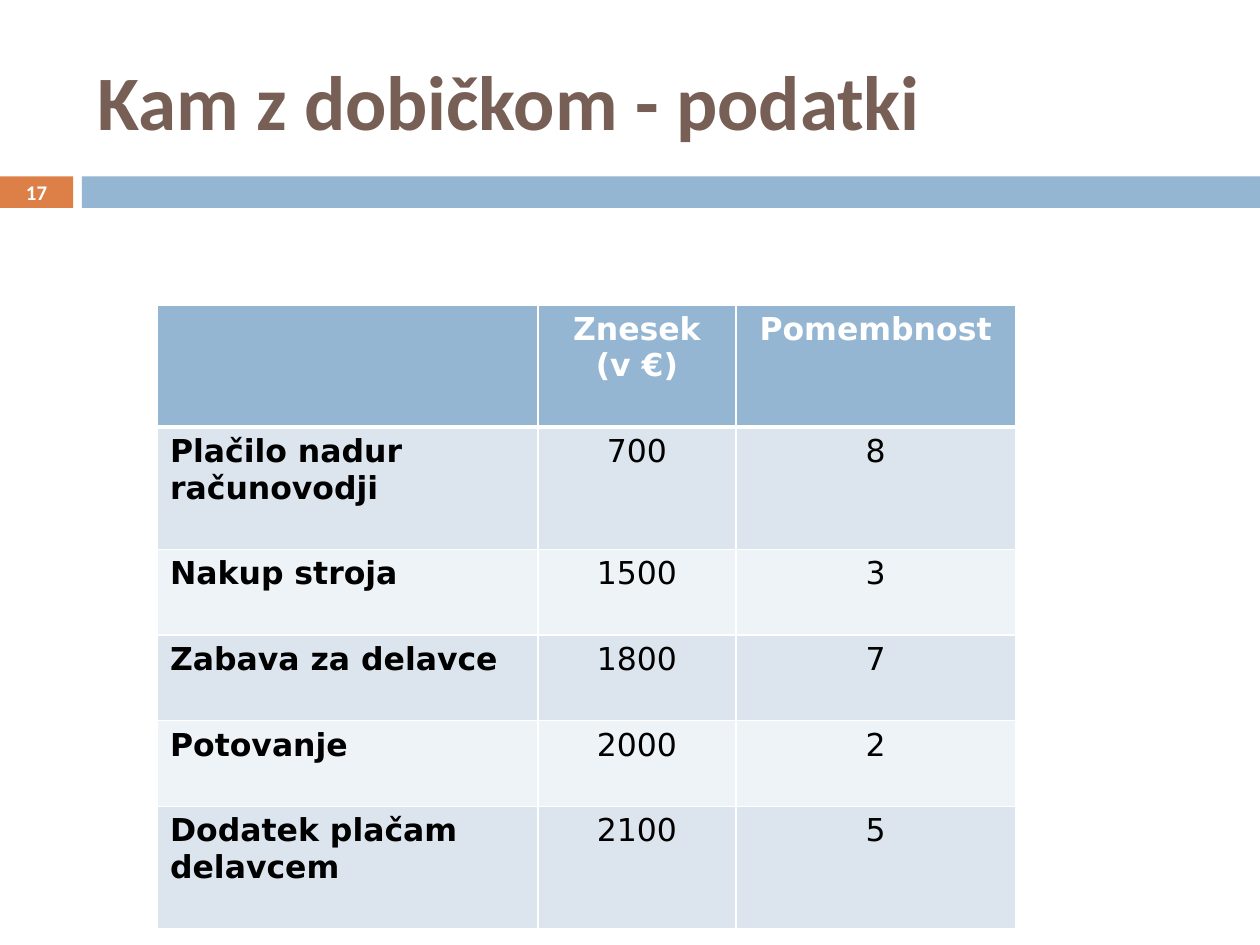
from lxml.etree import SubElement
from pptx import Presentation
from pptx.dml.color import RGBColor
from pptx.enum.shapes import MSO_SHAPE
from pptx.enum.text import MSO_ANCHOR, PP_ALIGN
from pptx.oxml.ns import qn
from pptx.util import Inches, Pt

BLUE, ORANGE, BROWN, WHITE = "94B6D2", "DD8047", "775F55", "FFFFFF"
BANDS = ["DCE5EE", "EEF3F7"]


def paint(fill, color):
    fill.solid()
    fill.fore_color.rgb = RGBColor.from_string(color)


def add_run(p, text, font, size, color, bold, align=PP_ALIGN.LEFT):
    p.alignment = align
    r = p.add_run()
    r.text = text
    r.font.name, r.font.size, r.font.bold = font, Pt(size), bold
    paint(r.font.fill, color)


prs = Presentation()
prs.slide_width, prs.slide_height = Inches(10), Inches(7.5)
s = prs.slides.add_slide(prs.slide_layouts[5])

# Title
title = s.shapes.title
title.left, title.top = Inches(0.67), Inches(0.25)
title.width, title.height = Inches(8.92), Inches(1.08)
tf = title.text_frame
tf.vertical_anchor = MSO_ANCHOR.MIDDLE
add_run(tf.paragraphs[0], "Kam z dobičkom - podatki", "Calibri", 44, BROWN, True)

# Divider: number block and bar
for left, width, color in [(0, 0.58, ORANGE), (0.65, 9.35, BLUE)]:
    sp = s.shapes.add_shape(MSO_SHAPE.RECTANGLE, Inches(left), Inches(1.4),
                            Inches(width), Inches(0.25))
    sp.shadow.inherit = False
    paint(sp.fill, color)
    sp.line.fill.background()

# Slide number
number = s.shapes.add_textbox(0, Inches(1.39), Inches(0.58), Inches(0.27))
tf = number.text_frame
tf.word_wrap = True
tf.vertical_anchor = MSO_ANCHOR.MIDDLE
tf.margin_left = tf.margin_right = tf.margin_top = tf.margin_bottom = 0
add_run(tf.paragraphs[0], "17", "Calibri", 11.9, WHITE, True, PP_ALIGN.CENTER)

# Table of spending options
rows = [
    ("", "Znesek (v €)", "Pomembnost"),
    ("Plačilo nadur računovodji", "700", "8"),
    ("Nakup stroja", "1500", "3"),
    ("Zabava za delavce", "1800", "7"),
    ("Potovanje", "2000", "2"),
    ("Dodatek plačam delavcem", "2100", "5"),
]
col_widths = [3.02, 1.57, 2.22]
row_heights = [0.97, 0.97, 0.68, 0.68, 0.68, 0.97]
table = s.shapes.add_table(len(rows), len(col_widths), Inches(1.25), Inches(2.42),
                           Inches(sum(col_widths)), Inches(sum(row_heights))).table
for column, width in zip(table.columns, col_widths):
    column.width = Inches(width)
for row, height in zip(table.rows, row_heights):
    row.height = Inches(height)

for i, values in enumerate(rows):
    for j, value in enumerate(values):
        cell = table.cell(i, j)
        header = i == 0
        # White grid, thicker below the header
        tc_pr = cell._tc.get_or_add_tcPr()
        for side in "LRTB":
            thick = (i, side) in [(0, "B"), (1, "T")]
            ln = SubElement(tc_pr, qn(f"a:ln{side}"), w=str(Pt(3 if thick else 1)))
            SubElement(SubElement(ln, qn("a:solidFill")), qn("a:srgbClr"), val=WHITE)
        paint(cell.fill, BLUE if header else BANDS[(i - 1) % 2])
        if value:
            add_run(cell.text_frame.paragraphs[0], value, "DejaVu Sans", 18,
                    WHITE if header else "000000", header or j == 0,
                    PP_ALIGN.CENTER if j else PP_ALIGN.LEFT)

prs.save("out.pptx")
